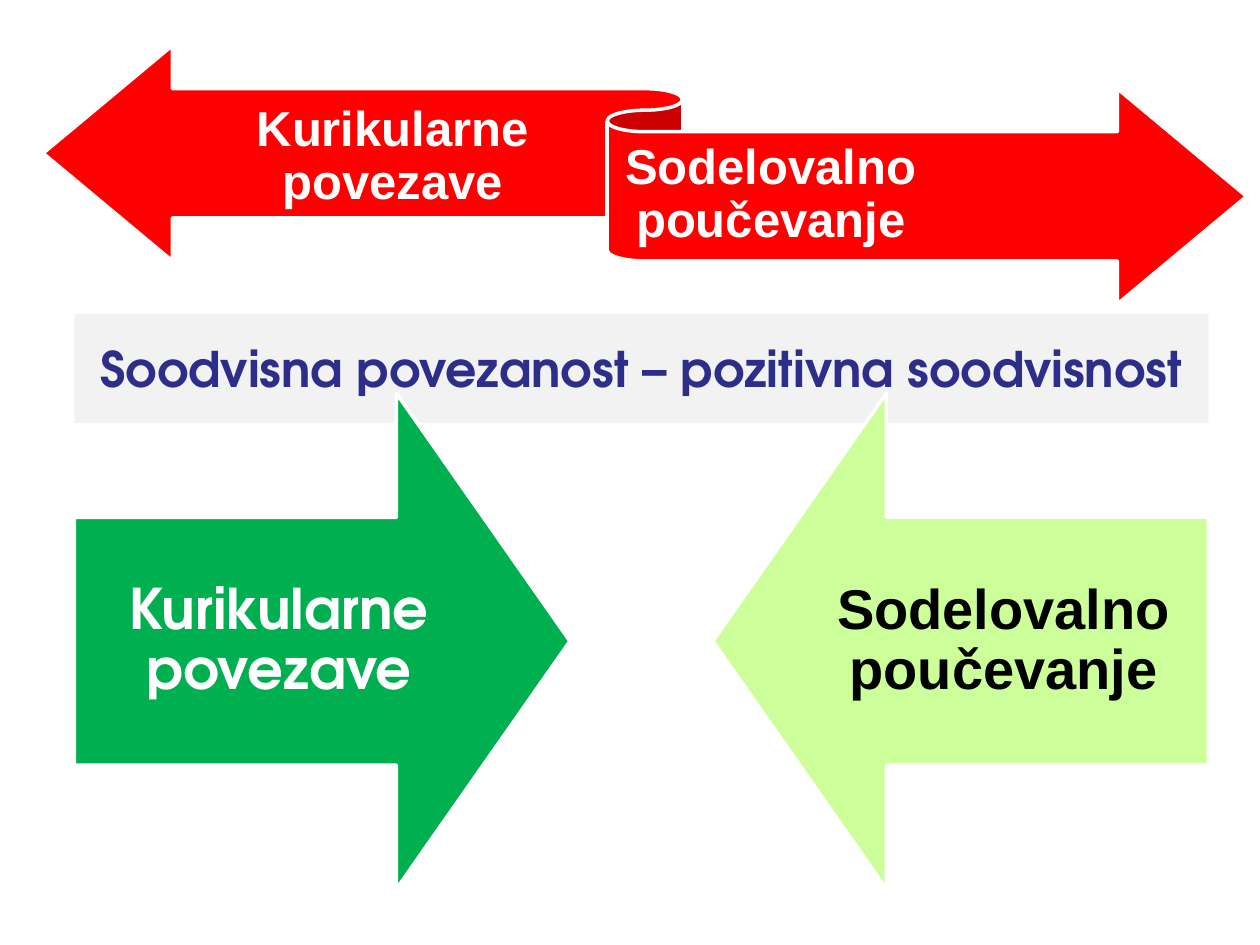
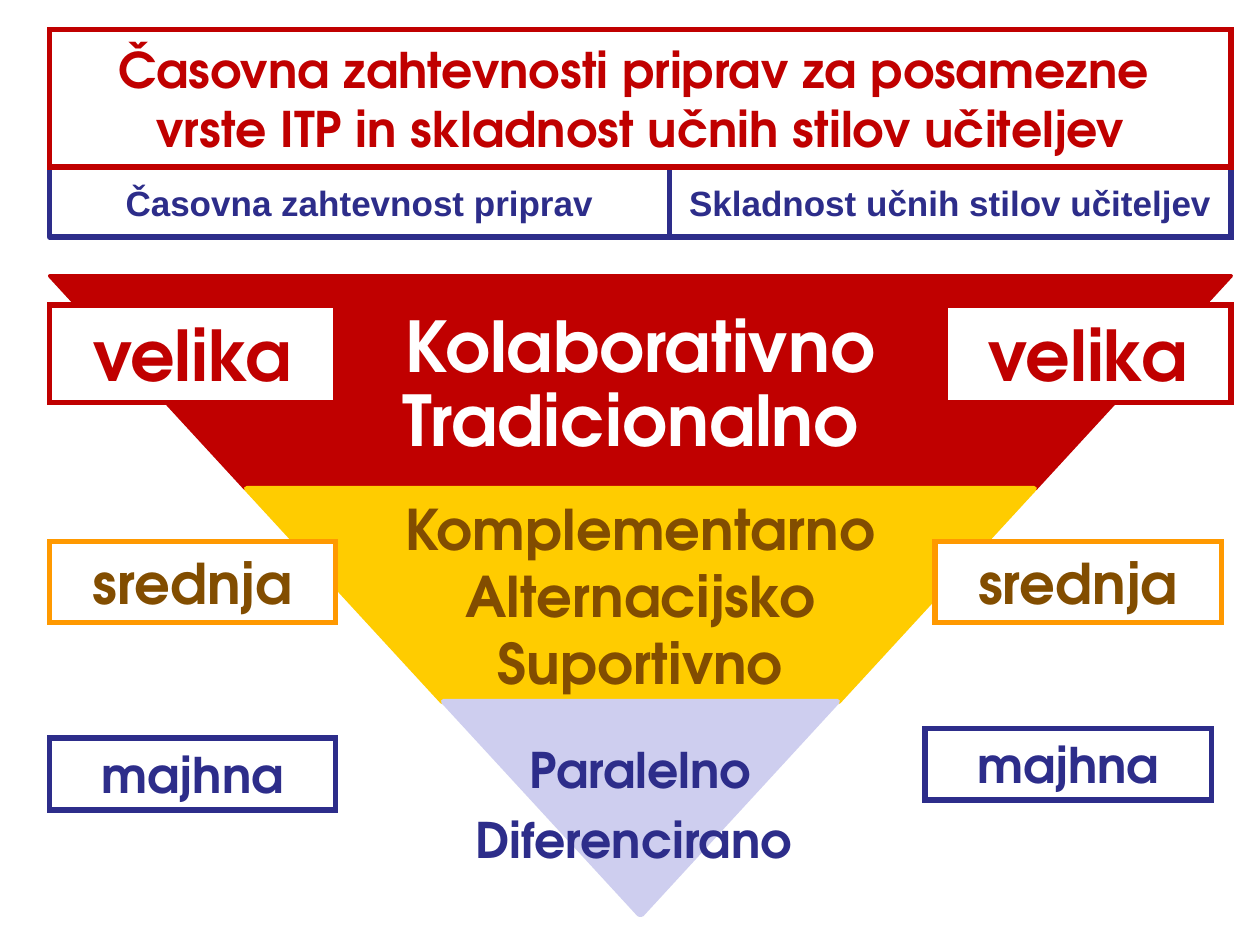
import lxml.etree
import pptx
import pptx.util
import pptx.dml.color
import pptx.enum.shapes
import pptx.enum.text
import pptx.oxml.ns

Cm = pptx.util.Cm
Pt = pptx.util.Pt
SHAPES = pptx.enum.shapes.MSO_SHAPE
ANCHORS = pptx.enum.text.MSO_ANCHOR
FITS = pptx.enum.text.MSO_AUTO_SIZE
CENTER = pptx.enum.text.PP_ALIGN.CENTER

DISPLAY, PLAIN = "TeX Gyre Adventor", "Arial"
WHITE, BLACK, RED, BLUE, BROWN = "FFFFFF", "000000", "C00000", "2D2D8A", "824D00"
TIGHT, SPACE_AFTER = 0.9, 0.35  # line spacing, and gap as a share of the text size

# Slide 1
LINKS_TITLE = "Soodvisna povezanost – pozitivna soodvisnost"
CURRICULAR, COTEACHING = "Kurikularne povezave", "Sodelovalno poučevanje"
LEFT, RIGHT = 1.5, 24.36
ARROW_SIZE, ARROW_TOP = 9.99, 7.93
ARROW_TEXT_WIDTH, ARROW_TEXT_HEIGHT = 8.25, 5
# text, rotation, fill, font, text colour
ARROWS = [
    (CURRICULAR, 270, "00B050", DISPLAY, WHITE),
    (COTEACHING, 90, "CCFF99", PLAIN, BLACK),
]
RIBBON_BOX = (0.87, 0.92, 24.26, 5.21)
RIBBON_TEXTS = [
    (CURRICULAR, (4.7, 1.91, 6.43, 2.54)),
    (COTEACHING, (12.38, 2.67, 6.32, 2.54)),
]

# Slide 2
MARGIN, FULL_WIDTH = 1, 23.82
HEADING = "Časovna zahtevnosti priprav za posamezne \vvrste ITP in skladnost učnih stilov učiteljev"
COLUMNS = ["Časovna zahtevnost priprav", "Skladnost učnih stilov učiteljev"]
HEADING_TOP, HEADING_HEIGHT = 0.6, 2.77
COLUMN_TOP, COLUMN_HEIGHT, COLUMN_SPLIT = 3.38, 1.4, 13.49
TIER_TOP, TIER_HEIGHT, TIER_SLANT = 5.56, 4.29, 0.92
LABEL_WIDTH = 5.77
TIERS = [
    {"types": ["Kolaborativno", "Tradicionalno "], "fill": RED, "line_width": 2,
     "text_share": 0.65, "inset": 0.15, "colour": WHITE, "size": 40, "spacings": [1, TIGHT]},
    {"types": ["Komplementarno", "Alternacijsko", "Suportivno"], "fill": "FFCC00",
     "line_width": 3, "text_share": 0.65, "inset": 0.1, "colour": BROWN, "size": 32,
     "spacings": [1, 1, 1]},
    {"types": ["Paralelno", "Diferencirano "], "fill": "CECEEF", "line_width": 3,
     "text_share": 1, "inset": 0.1, "colour": BLUE, "size": 28, "spacings": [TIGHT, TIGHT]},
]
# text, size, text colour, border, height, (left, top) on each side
LABELS = [
    ("velika", 40, RED, RED, 1.96, [(MARGIN, 6.15), (19.05, 6.15)]),
    ("srednja", 32, BROWN, "FF9900", 1.63, [(MARGIN, 10.92), (18.85, 10.92)]),
    ("majhna", 28, BLUE, BLUE, 1.45, [(MARGIN, 14.88), (18.65, 14.68)]),
]


def colour_of(value):
    return pptx.dml.color.RGBColor.from_string(value)


def set_all(target, values):
    for name, value in values.items():
        setattr(target, name, value)


def place(shape, box):
    set_all(shape, dict(zip(("left", "top", "width", "height"), map(Cm, box))))


def paint(shape, fill, line=None, line_width=3):
    shape.fill.solid()
    shape.fill.fore_color.rgb = colour_of(fill)
    if line:
        shape.line.color.rgb = colour_of(line)
        shape.line.width = Pt(line_width)
    else:
        shape.line.fill.background()


def write(shape, lines, size, colour, font=DISPLAY, spacings=None, insets=(0.25, 0.13, 0.25, 0.13),
          anchor=ANCHORS.MIDDLE, fit=FITS.NONE):
    """Fill the shape with centred bold paragraphs; insets run left, top, right, bottom."""
    frame = shape.text_frame
    set_all(frame, {"word_wrap": True, "auto_size": fit, "vertical_anchor": anchor})
    margins = ("margin_left", "margin_top", "margin_right", "margin_bottom")
    set_all(frame, dict(zip(margins, map(Cm, insets))))
    for index, line in enumerate(lines):
        paragraph = frame.add_paragraph() if index else frame.paragraphs[0]
        paragraph.text = line
        spacing = spacings[index] if spacings else 1
        gap = Pt(size * SPACE_AFTER) if spacing == TIGHT else Pt(0)
        set_all(paragraph, {"alignment": CENTER, "line_spacing": spacing, "space_after": gap})
        for run in paragraph.runs:
            set_all(run.font, {"name": font, "size": Pt(size), "bold": True})
            run.font.color.rgb = colour_of(colour)


def add_shape(slide, kind, box, fill, line, line_width=3, rotation=0, adjustments=()):
    shape = slide.shapes.add_shape(kind, *map(Cm, box))
    shape.shadow.inherit = False
    shape.rotation = rotation
    for index, value in enumerate(adjustments):
        shape.adjustments[index] = value
    paint(shape, fill, line, line_width)
    return shape


def add_box(slide, box, border):
    """Add a white rectangle whose border has sharp corners."""
    shape = add_shape(slide, SHAPES.RECTANGLE, box, WHITE, border)
    outline = shape.element.spPr.find(pptx.oxml.ns.qn("a:ln"))
    lxml.etree.SubElement(outline, pptx.oxml.ns.qn("a:miter"), lim="800000")
    return shape


def add_text(slide, box, lines, size, colour, **options):
    write(slide.shapes.add_textbox(*map(Cm, box)), lines, size, colour, **options)


def add_title_slide(presentation, box, title, size, font, fill, line=None):
    slide = presentation.slides.add_slide(presentation.slide_layouts[5])
    place(slide.shapes.title, box)
    paint(slide.shapes.title, fill, line)
    write(slide.shapes.title, [title], size, BLUE, font)
    return slide


def build_links_slide(presentation):
    slide = add_title_slide(presentation, (LEFT, 6.32, RIGHT - LEFT, 2.21),
                            LINKS_TITLE, 28, DISPLAY, "F2F2F2")
    text_top = ARROW_TOP + (ARROW_SIZE - ARROW_TEXT_HEIGHT) / 2
    for side, (text, rotation, fill, font, colour) in enumerate(ARROWS):
        arrow_left = RIGHT - ARROW_SIZE if side else LEFT
        text_left = RIGHT - ARROW_TEXT_WIDTH if side else LEFT
        add_shape(slide, SHAPES.DOWN_ARROW, (arrow_left, ARROW_TOP, ARROW_SIZE, ARROW_SIZE),
                  fill, WHITE, 2, rotation, (0.5, 0.35))
        add_text(slide, (text_left, text_top, ARROW_TEXT_WIDTH, ARROW_TEXT_HEIGHT), [text],
                 32, colour, font=font, spacings=[TIGHT], insets=[0.64] * 4)
    add_shape(slide, SHAPES.LEFT_RIGHT_RIBBON, RIBBON_BOX, "FF0000", WHITE, 2)
    for text, box in RIBBON_TEXTS:
        add_text(slide, box, [text], 28, WHITE, font=PLAIN, spacings=[TIGHT],
                 insets=(0, 0.28, 0, 0.3))


def build_preparation_slide(presentation):
    right = MARGIN + FULL_WIDTH
    slide = add_title_slide(
        presentation, (MARGIN, COLUMN_TOP, COLUMN_SPLIT - MARGIN, COLUMN_HEIGHT),
        COLUMNS[0], 20, PLAIN, WHITE, BLUE)
    second_column = add_box(
        slide, (COLUMN_SPLIT, COLUMN_TOP, right - COLUMN_SPLIT, COLUMN_HEIGHT), BLUE)
    write(second_column, [COLUMNS[1]], 20, BLUE, PLAIN)

    center = MARGIN + FULL_WIDTH / 2
    for index, tier in enumerate(TIERS):
        width = FULL_WIDTH * (len(TIERS) - index) / len(TIERS)
        text_width = width * tier["text_share"]
        top = TIER_TOP + index * TIER_HEIGHT
        add_shape(slide, SHAPES.TRAPEZOID, (center - width / 2, top, width, TIER_HEIGHT),
                  tier["fill"], tier["fill"], tier["line_width"], 180, [TIER_SLANT])
        add_text(slide, (center - text_width / 2, top, text_width, TIER_HEIGHT), tier["types"],
                 tier["size"], tier["colour"], spacings=tier["spacings"],
                 insets=[tier["inset"]] * 4)

    for text, size, colour, border, height, corners in LABELS:
        for left, top in corners:
            label = add_box(slide, (left, top, LABEL_WIDTH, height), border)
            write(label, [text], size, colour, anchor=ANCHORS.TOP, fit=FITS.SHAPE_TO_FIT_TEXT)

    heading = add_box(slide, (MARGIN, HEADING_TOP, FULL_WIDTH, HEADING_HEIGHT), RED)
    write(heading, [HEADING], 28, RED)


def main():
    presentation = pptx.Presentation()
    presentation.slide_width, presentation.slide_height = Cm(25.4), Cm(19.05)
    build_links_slide(presentation)
    build_preparation_slide(presentation)
    presentation.save("out.pptx")


if __name__ == "__main__":
    main()
